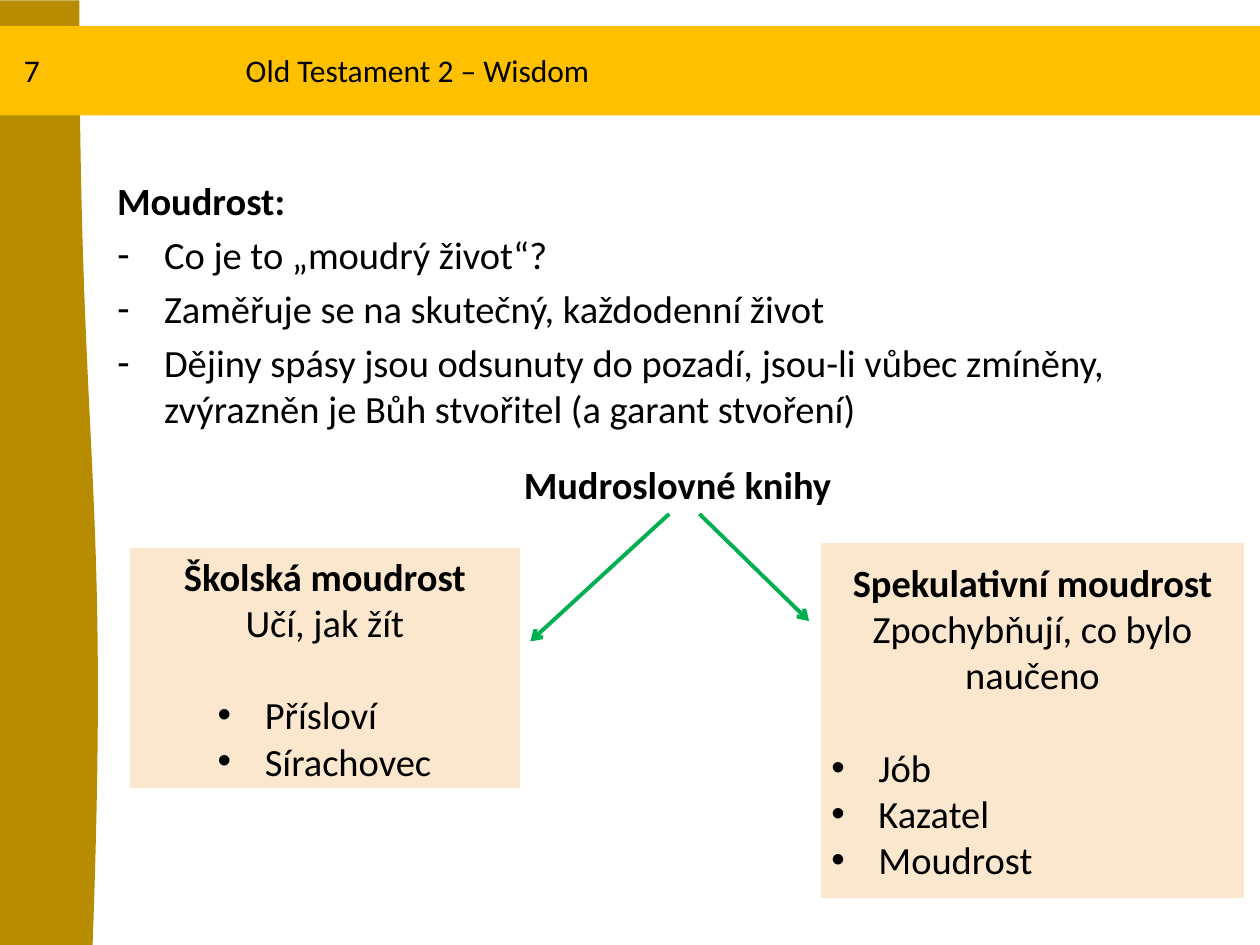
from lxml import etree
from pptx import Presentation
from pptx.dml.color import RGBColor
from pptx.enum import shapes, text
from pptx.oxml.ns import qn
from pptx.util import Cm, Pt

SAND, GOLD, OCHRE, GREEN = "FAE7CE", "FFC000", "B88C00", "00B050"
LEFT, CENTER = text.PP_ALIGN.LEFT, text.PP_ALIGN.CENTER


def paint(shape, fill, line=None):
    shape.shadow.inherit = False
    shape.fill.solid()
    shape.fill.fore_color.rgb = RGBColor.from_string(fill)
    if line:
        shape.line.color.rgb = RGBColor.from_string(line)
        shape.line.width = Pt(2)
    else:
        shape.line.fill.background()


def write(shape, content, first=False, size=22, bold=False, align=LEFT,
          before=0, bullet=None, indent=0.95):
    """Add one paragraph; the first one uses the paragraph already there."""
    frame = shape.text_frame
    par = frame.paragraphs[0] if first else frame.add_paragraph()
    par.alignment, par.space_before = align, Pt(before)
    run = par.add_run()
    run.text = content
    run.font.name, run.font.size, run.font.bold = "Calibri", Pt(size), bold
    run.font.color.rgb = RGBColor.from_string("000000")
    if bullet:
        props = par._p.get_or_add_pPr()
        props.set("marL", str(Cm(indent)))
        props.set("indent", str(-Cm(0.95)))
        etree.SubElement(props, qn("a:buFont"), typeface="Arial")
        etree.SubElement(props, qn("a:buChar"), char=bullet)


prs = Presentation()
prs.slide_width, prs.slide_height = Cm(25.4), Cm(19.05)
slide = prs.slides.add_slide(prs.slide_layouts[5])
add = slide.shapes

# Introduction
intro = add.add_textbox(Cm(2.11), Cm(3.45), Cm(23.29), Cm(5.6))
intro.text_frame.word_wrap = True
write(intro, "Moudrost:", first=True, bold=True)
for point in ("Co je to „moudrý život“?",
              "Zaměřuje se na skutečný, každodenní život",
              "Dějiny spásy jsou odsunuty do pozadí, jsou-li vůbec zmíněny, "
              "zvýrazněn je Bůh stvořitel (a garant stvoření)"):
    write(intro, point, before=4.4, bullet="-")

# Two kinds of wisdom: place, heading, aim, indent of the books, books
kinds = [
    ((2.59, 11.02, 7.92, 4.9), "Školská moudrost", "Učí, jak žít",
     2.5, ["Přísloví", "Sírachovec"]),
    ((16.51, 10.92, 8.61, 7.21), "Spekulativní moudrost",
     "Zpochybňují, co bylo naučeno", 0.95, ["Jób", "Kazatel", "Moudrost"]),
]
for place, heading, aim, indent, books in kinds:
    kind = add.add_shape(shapes.MSO_SHAPE.RECTANGLE, *map(Cm, place))
    paint(kind, SAND, line="FFFFFF")
    kind.text_frame.vertical_anchor = text.MSO_ANCHOR.MIDDLE
    write(kind, heading, first=True, bold=True, align=CENTER)
    write(kind, aim, align=CENTER)
    for i, book in enumerate(books):
        write(kind, book, before=0 if i else 26.5, bullet="•", indent=indent)

for ends in ((13.49, 10.36, 10.69, 12.93), (14.1, 10.36, 16.31, 12.52)):
    arrow = add.add_connector(shapes.MSO_CONNECTOR.STRAIGHT, *map(Cm, ends))
    arrow.line.color.rgb = RGBColor.from_string(GREEN)
    arrow.line.width = Pt(2.25)
    etree.SubElement(arrow.line._get_or_add_ln(), qn("a:tailEnd"), type="arrow")
    etree.SubElement(arrow._element.spPr, qn("a:effectLst"))

books_label = add.add_textbox(Cm(10.31), Cm(9.17), Cm(6.78), Cm(1.19))
books_label.text_frame.word_wrap = False
write(books_label, "Mudroslovné knihy", first=True, bold=True)

# Side strip and header band
strip = add.add_shape(shapes.MSO_SHAPE.FLOWCHART_DOCUMENT,
                      Cm(-8.53), Cm(8.53), Cm(19.05), Cm(2.01))
strip.rotation = 270
paint(strip, OCHRE)
band = add.add_shape(shapes.MSO_SHAPE.RECTANGLE, 0, Cm(0.53), Cm(25.4), Cm(1.8))
paint(band, GOLD)

title = add.title
title.left, title.top, title.width, title.height = map(Cm, (4.7, 0.91, 20.7, 1.02))
title.text_frame.auto_size = text.MSO_AUTO_SIZE.NONE
title.text_frame.vertical_anchor = text.MSO_ANCHOR.TOP
write(title, "Old Testament 2 – Wisdom", first=True, size=18)
add._spTree.append(title._element)  # in front of the band

page = add.add_textbox(Cm(0.23), Cm(0.91), Cm(0.79), Cm(1.02))
page.text_frame.word_wrap = False
write(page, "7", first=True, size=18)

prs.save("out.pptx")
